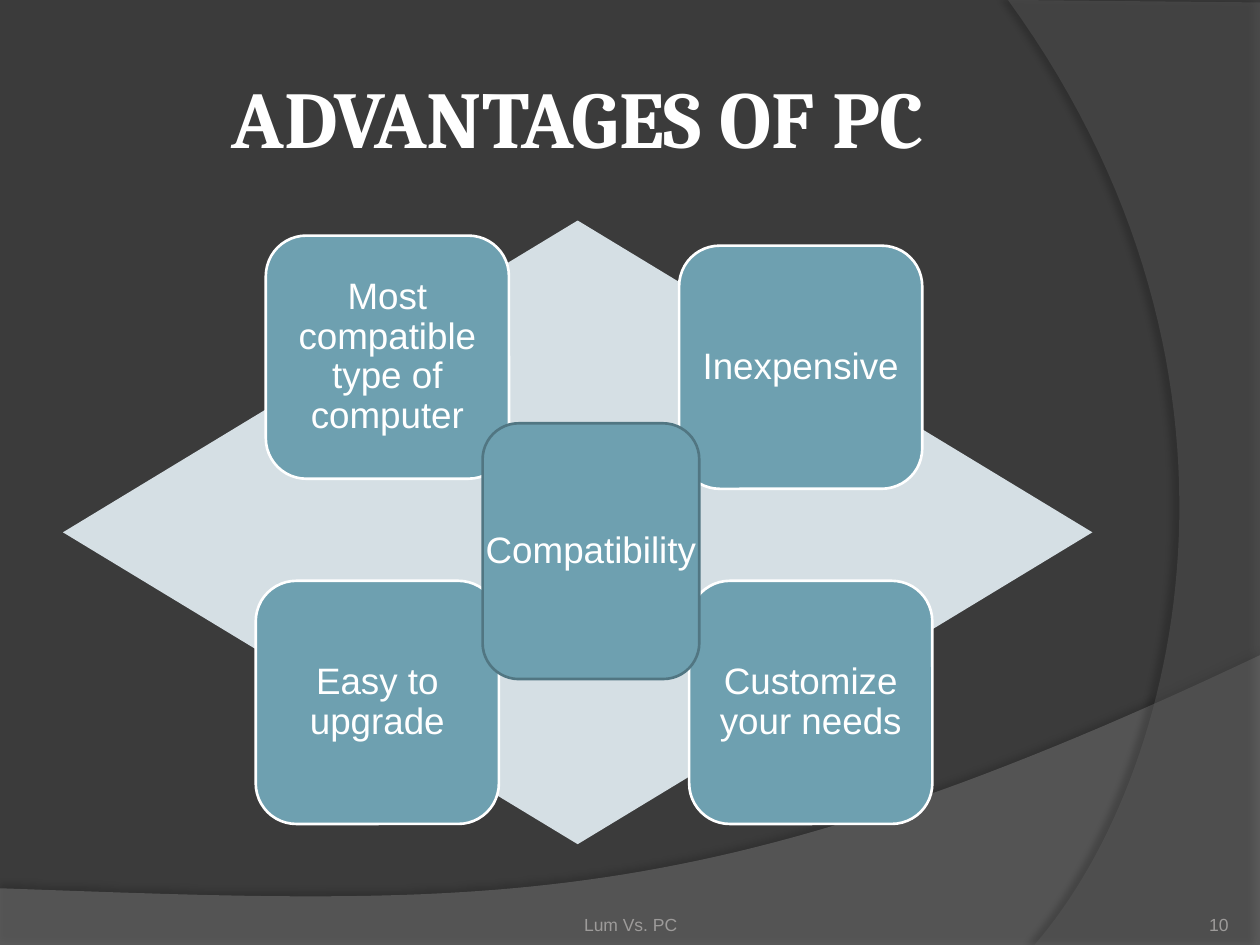
from lxml.etree import SubElement
from pptx import Presentation
from pptx.dml.color import RGBColor
from pptx.enum.shapes import MSO_SHAPE
from pptx.enum.text import MSO_ANCHOR, PP_ALIGN
from pptx.oxml.ns import qn
from pptx.util import Inches, Pt

WHITE, TEAL, DARK_TEAL, PALE, GREY = "FFFFFF", "6EA0B0", "517682", "D5DFE4", "9D9B9A"
CARD_SIZE = 1.93
CARDS = [
    (2.11, 1.87, "Most compatible type of computer"),
    (5.39, 1.95, "Inexpensive"),
    (2.03, 4.61, "Easy to upgrade"),
    (5.47, 4.61, "Customize your needs"),
]


def color(hex_text):
    return RGBColor.from_string(hex_text)


def paint(shape, fill, line=None):
    shape.shadow.inherit = False
    shape.fill.solid()
    shape.fill.fore_color.rgb = color(fill)
    if line:
        shape.line.color.rgb = color(line)
        shape.line.width = Pt(1.5)
    else:
        shape.line.fill.background()


def write(shape, text, size, ink=WHITE, font="Arial", bold=False, align=PP_ALIGN.CENTER,
          anchor=MSO_ANCHOR.MIDDLE, margins=(0, 0, 0, 0), wrap=True):
    frame = shape.text_frame
    frame.word_wrap = wrap
    frame.vertical_anchor = anchor
    (frame.margin_left, frame.margin_top,
     frame.margin_right, frame.margin_bottom) = map(Inches, margins)
    frame.text = text
    para = frame.paragraphs[0]
    para.alignment = align
    span = para.runs[0].font
    span.name, span.size, span.bold = font, Pt(size), bold
    span.color.rgb = color(ink)
    return para


def add_text(page, place, text, size, **style):
    write(page.shapes.add_textbox(*map(Inches, place)), text, size, **style)


def add_card(page, place, text, line, wrap=True):
    card = page.shapes.add_shape(MSO_SHAPE.ROUNDED_RECTANGLE, *map(Inches, place))
    paint(card, TEAL, line)
    para = write(card, text, 21, wrap=wrap)
    para.line_spacing = 0.9


def curve(start, control1, control2, end, steps=60):
    """Points along a cubic Bezier curve."""
    points = []
    for step in range(steps + 1):
        t = step / steps
        weights = ((1 - t) ** 3, 3 * t * (1 - t) ** 2, 3 * t * t * (1 - t), t ** 3)
        points.append(tuple(
            sum(weight * value for weight, value in zip(weights, values))
            for values in zip(start, control1, control2, end)))
    return points


def add_sweep(page, points, fill, opacity, shadow_opacity, distance, direction):
    """Translucent background band with a soft outer shadow."""
    points = [(Inches(x), Inches(y)) for x, y in points]
    builder = page.shapes.build_freeform(*points[0])
    builder.add_line_segments(points[1:], close=True)
    sweep = builder.convert_to_shape()
    paint(sweep, fill)
    properties = sweep.element.spPr
    fill_color = properties.find(qn("a:solidFill")).find(qn("a:srgbClr"))
    SubElement(fill_color, qn("a:alpha"), val=str(opacity * 1000))
    shadow = SubElement(properties.find(qn("a:effectLst")), qn("a:outerShdw"),
                        blurRad=str(Pt(4)), dist=str(Pt(distance)),
                        dir=str(direction * 60000), algn="ctr", rotWithShape="0")
    shadow_color = SubElement(shadow, qn("a:srgbClr"), val="000000")
    SubElement(shadow_color, qn("a:alpha"), val=str(shadow_opacity * 1000))


def main():
    deck = Presentation()
    deck.slide_width, deck.slide_height = Inches(10), Inches(7.5)
    page = deck.slides.add_slide(deck.slide_layouts[6])

    # Background
    page.background.fill.solid()
    page.background.fill.fore_color.rgb = color("3B3B3B")
    bottom_edge = curve((10, 5.2), (5.59, 7.29), (3.91, 7.19), (0, 7.05))
    add_sweep(page, [(0, 7.51), (10, 7.51)] + bottom_edge, "7F7F7F", 45, 35, 3.5, 270)
    right_edge = curve((8.21, 7.5), (9.35, 6.19), (10.18, 3), (8, 0))
    add_sweep(page, [(10, 0.02), (10, 7.5)] + right_edge, "5E5E5E", 40, 45, 4, 180)

    # Title
    add_text(page, (0.5, 0.3, 8.17, 1.25), "ADVANTAGES OF PC", 46,
             font="Cambria", bold=True, margins=(0.05,) * 4)

    # Diamond with four cards around the central one
    diamond = page.shapes.add_shape(
        MSO_SHAPE.DIAMOND, *map(Inches, (0.5, 1.75, 8.17, 4.95)))
    paint(diamond, PALE)
    for left, top, text in CARDS:
        add_card(page, (left, top, CARD_SIZE, CARD_SIZE), text, WHITE)
    add_card(page, (3.83, 3.36, 1.72, 2.03), "Compatibility", DARK_TEAL, wrap=False)

    # Footer
    add_text(page, (3.42, 7.02, 3.17, 0.4), "Lum Vs. PC", 10, ink=GREY,
             anchor=MSO_ANCHOR.BOTTOM, margins=(0, 0.05, 0, 0))
    add_text(page, (8.92, 7.02, 0.83, 0.4), "10", 10, ink=GREY,
             align=PP_ALIGN.RIGHT, anchor=MSO_ANCHOR.BOTTOM)

    deck.save("out.pptx")


if __name__ == "__main__":
    main()
